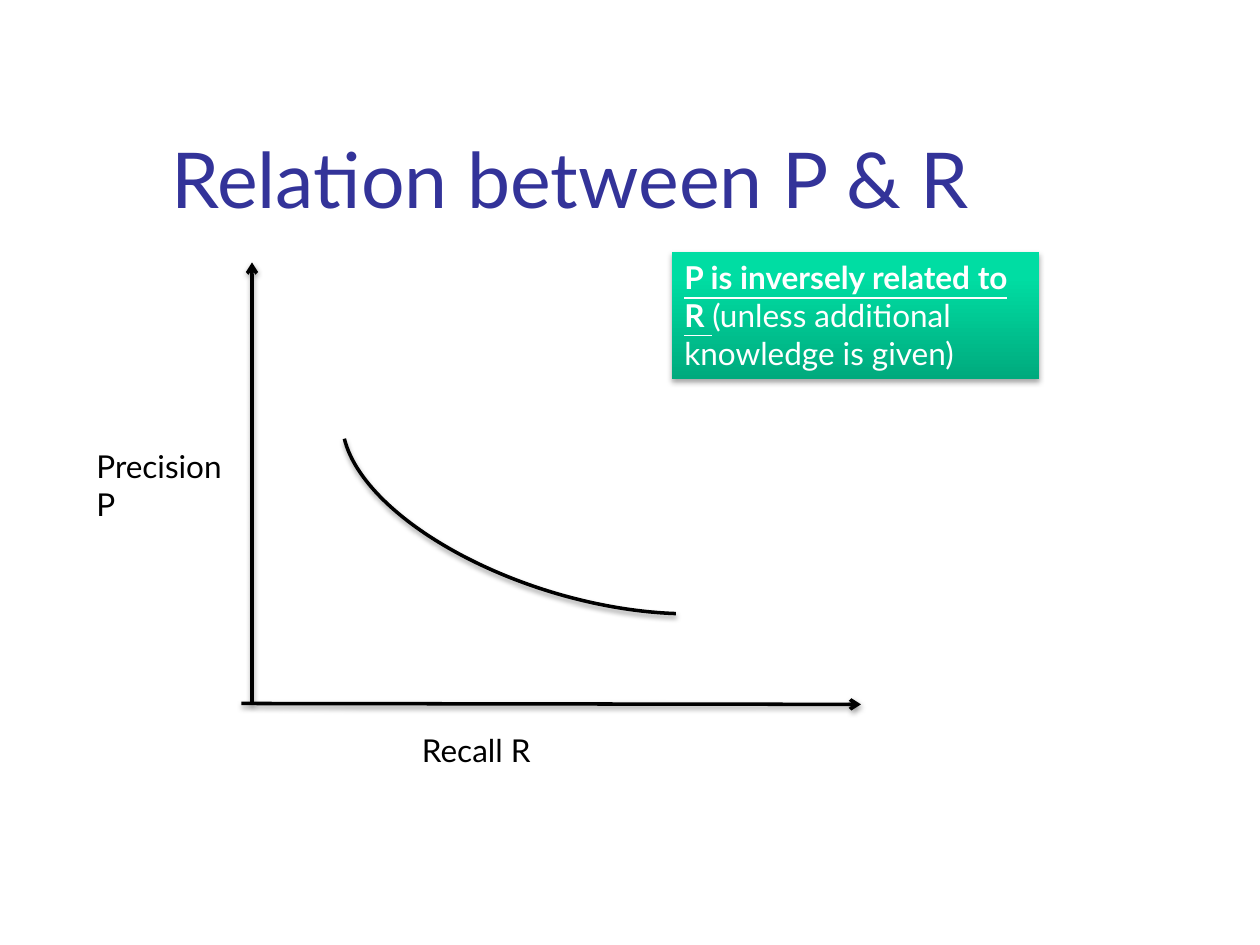
"""Build the slide on the inverse relation between precision and recall."""
import copy

import lxml.etree
import pptx
import pptx.dml.color
import pptx.enum.shapes
import pptx.enum.text
import pptx.oxml.ns
import pptx.util

Pt = pptx.util.Pt
RGBColor = pptx.dml.color.RGBColor
ANCHOR = pptx.enum.text.MSO_ANCHOR
COLORS = {
    "title": "333399",
    "ink": "000000",
    "note_text": "FFFFFF",
    "note_dark": "00AA7D",
    "note_middle": "00DDA3",
    "note_light": "00DEA4",
}


def write_text(shape, text, size=18, color="ink", bold=False, underline=False, anchor=ANCHOR.TOP):
    """Append a formatted run to the first paragraph of a shape."""
    frame = shape.text_frame
    frame.word_wrap = True
    frame.vertical_anchor = anchor
    paragraph = frame.paragraphs[0]
    paragraph.alignment = pptx.enum.text.PP_ALIGN.LEFT
    run = paragraph.add_run()
    run.text = text
    run.font.name = "Lato"
    run.font.size = Pt(size)
    run.font.bold = bold
    run.font.underline = underline
    run.font.color.rgb = RGBColor.from_string(COLORS[color])


def draw_outline(shape):
    """Give a curve or an axis its black line."""
    shape.line.color.rgb = RGBColor.from_string(COLORS["ink"])
    shape.line.width = Pt(2)


presentation = pptx.Presentation()
presentation.slide_width = Pt(720)
presentation.slide_height = Pt(540)
slide = presentation.slides.add_slide(presentation.slide_layouts[5])
shapes = slide.shapes

title = shapes.title
title.left, title.top, title.width, title.height = Pt(90.7), Pt(16.6), Pt(613.4), Pt(115.2)
write_text(title, "Relation between P & R", size=44, color="title", anchor=ANCHOR.BOTTOM)

axes = [(144, 402, 144, 150), (138, 402, 492, 402.5)]
for ends in axes:
    axis = shapes.add_connector(
        pptx.enum.shapes.MSO_CONNECTOR.STRAIGHT, *[Pt(value) for value in ends]
    )
    draw_outline(axis)
    line = axis.line._get_or_add_ln()
    lxml.etree.SubElement(line, pptx.oxml.ns.qn("a:tailEnd"), type="arrow")

curve = shapes.add_shape(
    pptx.enum.shapes.MSO_SHAPE.ARC, Pt(190.8), Pt(206.6), Pt(288), Pt(134.6)
)
curve.adjustments[0] = 131.56
curve.adjustments[1] = 211.6
curve.rotation = 196.9
curve.fill.background()
draw_outline(curve)
curve._element.xpath(".//a:effectRef")[0].set("idx", "1")

labels = [("Precision P", 48, 252, 90, 50.9), ("Recall R", 234, 414, 156, 29.1)]
for text, *bounds in labels:
    label = shapes.add_textbox(*[Pt(value) for value in bounds])
    write_text(label, text)
    label.text_frame.auto_size = pptx.enum.text.MSO_AUTO_SIZE.SHAPE_TO_FIT_TEXT

note = shapes.add_shape(
    pptx.enum.shapes.MSO_SHAPE.RECTANGLE, Pt(384), Pt(144), Pt(210), Pt(72.7)
)
note.line.fill.background()
note.fill.gradient()
note.fill.gradient_angle = 90
stop_list = note._element.xpath(".//a:gsLst")[0]
stop_list.append(copy.deepcopy(stop_list[-1]))
note_stops = [(0, "note_dark"), (0.8, "note_middle"), (1, "note_light")]
for stop, (position, color) in zip(note.fill.gradient_stops, note_stops):
    stop.position = position
    stop.color.rgb = RGBColor.from_string(COLORS[color])
write_text(note, "P is inversely related to R ", color="note_text", bold=True, underline=True)
write_text(note, "(unless additional knowledge is given)", color="note_text")
note.text_frame.auto_size = pptx.enum.text.MSO_AUTO_SIZE.SHAPE_TO_FIT_TEXT

presentation.save("out.pptx")
